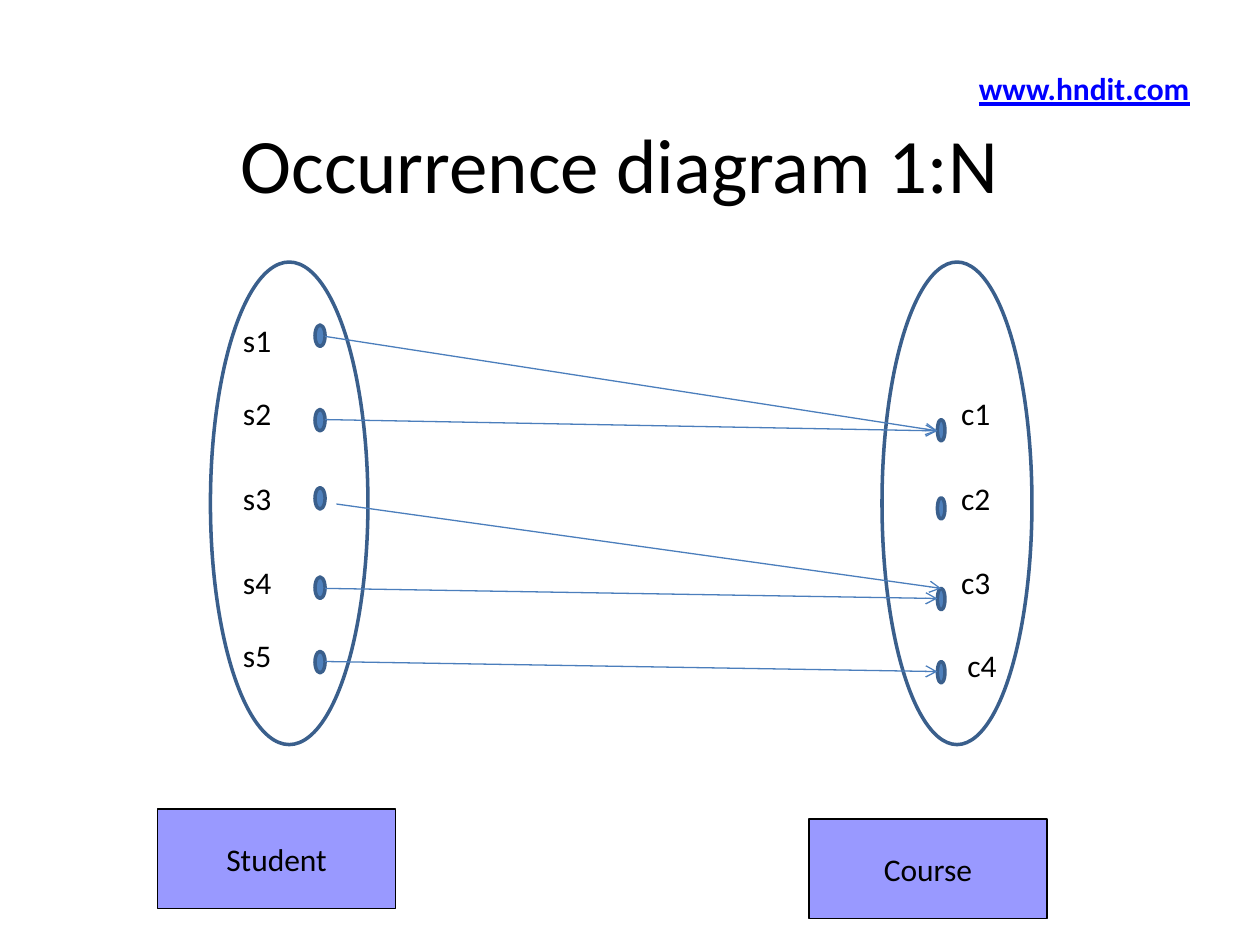
from dataclasses import dataclass

from lxml import etree
from pptx import Presentation
from pptx.dml.color import RGBColor
from pptx.enum import shapes, text
from pptx.oxml import ns
from pptx.util import Inches, Pt


@dataclass(frozen=True)
class Theme:
    font: str = "Calibri"
    ink: str = "000000"
    link: str = "0000FF"
    dot: str = "4F81BD"
    outline: str = "3A5F8C"
    arrow: str = "4B7EBC"
    name_fill: str = "9999FF"
    title_size: int = 44
    body_size: int = 18
    heavy_line: float = 2
    thin_line: float = 0.75


@dataclass(frozen=True)
class Box:
    left: float
    top: float
    width: float
    height: float

    def inside(self, left, top, width, height):
        return Box(self.left + left, self.top + top, width, height)

    def lengths(self):
        return [Inches(n) for n in (self.left, self.top, self.width, self.height)]


THEME = Theme()
DOT_HEIGHT = 0.17
LABEL_HEIGHT = 0.4


def write_text(shape, words, size=THEME.body_size, color=THEME.ink, bold=False,
               underline=False, align=text.PP_ALIGN.LEFT,
               anchor=text.MSO_ANCHOR.TOP, wrap=True):
    frame = shape.text_frame
    frame.word_wrap = wrap
    frame.vertical_anchor = anchor
    paragraph = frame.paragraphs[0]
    paragraph.alignment = align
    run = paragraph.add_run()
    run.text = words
    font = run.font
    font.name = THEME.font
    font.size = Pt(size)
    font.bold = bold
    font.underline = underline
    font.color.rgb = RGBColor.from_string(color)


def add_label(slide, box, words, **style):
    write_text(slide.shapes.add_textbox(*box.lengths()), words, **style)


def add_figure(slide, kind, box, line, width, fill=None):
    shape = slide.shapes.add_shape(kind, *box.lengths())
    shape.shadow.inherit = False
    if fill:
        shape.fill.solid()
        shape.fill.fore_color.rgb = RGBColor.from_string(fill)
    else:
        shape.fill.background()
    shape.line.color.rgb = RGBColor.from_string(line)
    shape.line.width = Pt(width)
    return shape


def add_oval(slide, box, fill=None):
    return add_figure(slide, shapes.MSO_SHAPE.OVAL, box,
                      THEME.outline, THEME.heavy_line, fill)


def add_arrow(slide, start, end):
    connector = slide.shapes.add_connector(
        shapes.MSO_CONNECTOR.STRAIGHT, *[Inches(n) for n in (*start, *end)])
    connector.line.color.rgb = RGBColor.from_string(THEME.arrow)
    connector.line.width = Pt(THEME.thin_line)
    line = connector.line._get_or_add_ln()
    etree.SubElement(line, ns.qn("a:tailEnd"), type="arrow")
    etree.SubElement(connector._element.spPr, ns.qn("a:effectLst"))


def add_header(slide, box, title, address):
    placeholder = slide.shapes.title
    placeholder.left, placeholder.top, placeholder.width, placeholder.height = (
        box.inside(0, 0.17, 9, 1.25).lengths())
    write_text(placeholder, title, size=THEME.title_size,
               align=text.PP_ALIGN.CENTER, anchor=text.MSO_ANCHOR.MIDDLE)
    add_label(slide, box.inside(7.25, 0, 1.88, LABEL_HEIGHT), address,
              color=THEME.link, bold=True, underline=True, wrap=False)


def add_entity_set(slide, box, members, dot_left, dot_width, label_width):
    add_oval(slide, box)
    for name, label_left, label_top, dot_top in members:
        add_label(slide, box.inside(label_left, label_top, label_width, LABEL_HEIGHT), name)
        add_oval(slide, box.inside(dot_left, dot_top, dot_width, DOT_HEIGHT), THEME.dot)


def add_entity_name(slide, box, name):
    shape = add_figure(slide, shapes.MSO_SHAPE.RECTANGLE, box,
                       THEME.ink, THEME.thin_line, THEME.name_fill)
    write_text(shape, name, align=text.PP_ALIGN.CENTER,
               anchor=text.MSO_ANCHOR.MIDDLE, wrap=False)


def add_occurrences(slide, box, links):
    for start_x, start_y, end_x, end_y in links:
        add_arrow(slide, (box.left + start_x, box.top + start_y),
                  (box.left + end_x, box.top + end_y))


def main():
    presentation = Presentation()
    presentation.slide_width, presentation.slide_height = Inches(10), Inches(7.5)
    slide = presentation.slides.add_slide(presentation.slide_layouts[5])

    add_header(slide, Box(0.42, 0.5, 9.13, 1.42),
               "Occurrence diagram 1:N", "www.hndit.com")

    students = [("s1", 0.16, 0.42, 0.5), ("s2", 0.16, 1, 1.17),
                ("s3", 0.16, 1.67, 1.79), ("s4", 0.16, 2.34, 2.5),
                ("s5", 0.16, 2.92, 3.09)]
    courses = [("c1", 0.53, 1, 1.25), ("c2", 0.53, 1.67, 1.87),
               ("c3", 0.53, 2.34, 2.59), ("c4", 0.58, 3, 3.17)]
    add_entity_set(slide, Box(1.67, 2.08, 1.25, 3.83), students,
                   dot_left=0.83, dot_width=0.08, label_width=0.58)
    add_entity_set(slide, Box(7, 2.08, 1.19, 3.83), courses,
                   dot_left=0.44, dot_width=0.06, label_width=0.56)

    add_entity_name(slide, Box(1.25, 6.42, 1.89, 0.79), "Student")
    add_entity_name(slide, Box(6.42, 6.5, 1.89, 0.79), "Course")

    add_occurrences(slide, Box(2.58, 2.67, 4.89, 2.66), [
        (0, 0, 4.86, 0.75),
        (0, 0.66, 4.86, 0.75),
        (0.09, 1.33, 4.89, 2),
        (0, 2, 4.86, 2.08),
        (0, 2.58, 4.86, 2.66),
    ])

    presentation.save("out.pptx")


if __name__ == "__main__":
    main()
